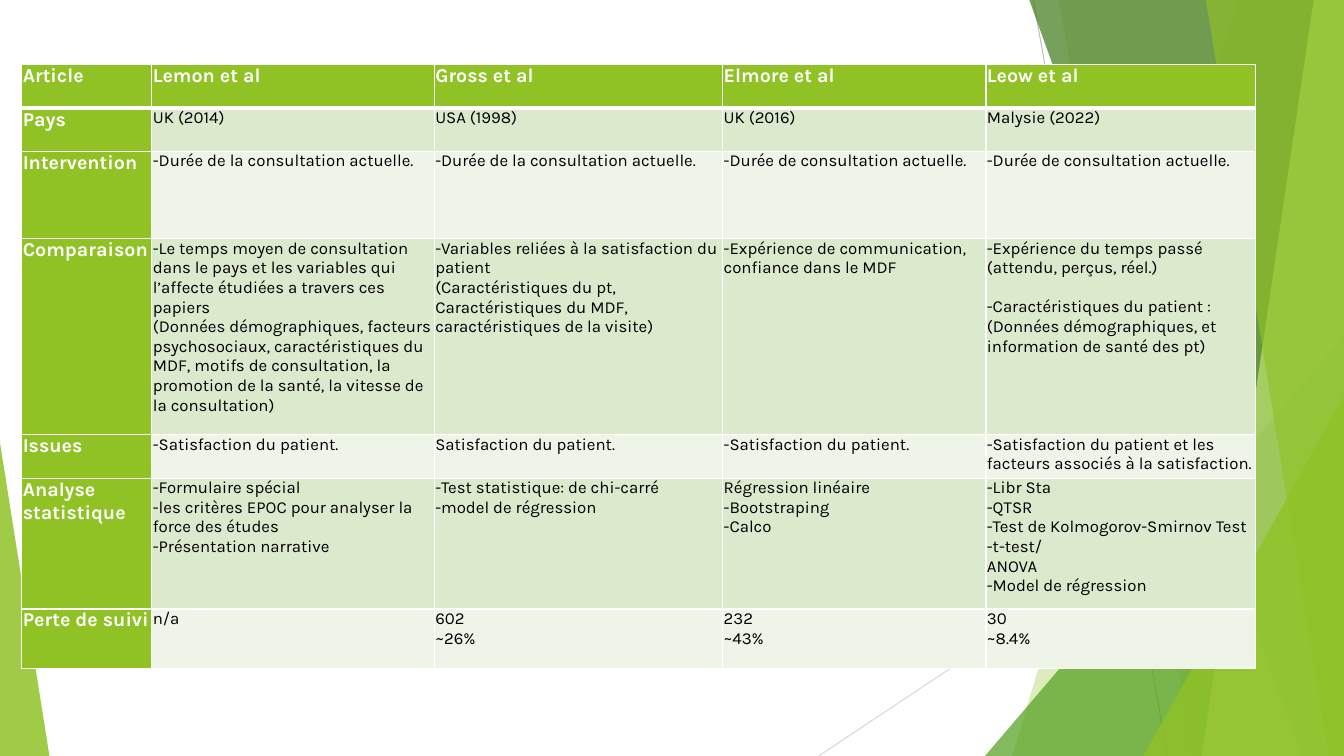
import dataclasses
import pptx
import pptx.util
import pptx.dml.color
import pptx.enum.shapes
import pptx.oxml
import lxml.etree

NS = "http://schemas.openxmlformats.org/drawingml/2006/main"


@dataclasses.dataclass(frozen=True)
class Theme:
    font: str = "Karla"
    head_size: int = 14
    body_size: int = 12
    gap: int = 14
    green: str = "90C226"
    leaf: str = "54A021"
    forest: str = "3F7819"
    lime: str = "C0E474"
    bands: tuple = ("DBE9CD", "EEF4E8")
    white: str = "FFFFFF"
    black: str = "000000"
    line_greys: tuple = ("BFBFBF", "D9D9D9")


@dataclasses.dataclass(frozen=True)
class Box:
    left: int
    top: int
    width: int
    height: int

    def x(self, percent):
        return round(self.left + self.width * percent / 100)

    def y(self, percent):
        return round(self.top + self.height * percent / 100)

    def area(self, left, top, right, bottom):
        x, y = self.x(left), self.y(top)
        return Box(x, y, self.x(right) - x, self.y(bottom) - y)


THEME = Theme()
GAP = "gap"  # opens a space above the next paragraph

# Background: lines as x, y, x, y; panels as top x, bottom x;
# triangles as left, top, right, apex. All are percentages of the page.
LINES = [(76.89, 0, 86.87, 100), (100, 53.73, 60.92, 100)]
FACETS = [
    ("panel", (92.12, 75.32), THEME.green, 30),
    ("panel", (78.77, 88.75), THEME.green, 20),
    ("triangle", (73.29, 44.4, 100, 1), THEME.leaf, 72),
    ("panel", (76.59, 96.85), THEME.forest, 70),
    ("panel", (97.75, 89.42), THEME.lime, 70),
    ("panel", (89.72, 98.87), THEME.green, 65),
    ("triangle", (85.07, 52.4, 100, 1), THEME.green, 80),
    ("triangle", (0, 58.53, 3.68, 0), THEME.green, 85),
]

# Table: column shares, row heights in units of one short row, and the text
COLUMNS = [1.29, 2.8, 2.86, 2.61, 2.67]
ROWS = [1, 1, 2, 4.5, 1, 3, 1.36]
STUDIES = [
    ["Article", "Lemon et al", "Gross et al", "Elmore et al", "Leow et al"],
    ["Pays", "UK (2014)", "USA (1998)", "UK (2016)", "Malysie (2022)"],
    ["Intervention",
     "-Durée de la consultation actuelle.",
     "-Durée de la consultation actuelle.",
     "-Durée de consultation actuelle.",
     "-Durée de consultation actuelle."],
    ["Comparaison",
     ["-Le temps moyen de consultation dans le pays et les variables qui "
      "l’affecte étudiées a travers ces papiers",
      "(Données démographiques, facteurs psychosociaux, caractéristiques du "
      "MDF, motifs de consultation, la promotion de la santé, la vitesse de "
      "la consultation)"],
     ["-Variables reliées à la satisfaction du patient",
      "(Caractéristiques du pt,",
      "Caractéristiques du MDF, caractéristiques de la visite)"],
     "-Expérience de communication, confiance dans le MDF",
     ["-Expérience du temps passé (attendu, perçus, réel.)",
      GAP,
      "-Caractéristiques du patient :",
      "(Données démographiques, et information de santé des pt)"]],
    ["Issues",
     "-Satisfaction du patient.",
     "Satisfaction du patient.",
     "-Satisfaction du patient.",
     "-Satisfaction du patient et les facteurs associés à la satisfaction."],
    ["Analyse statistique",
     ["-Formulaire spécial",
      "-les critères EPOC pour analyser la force des études",
      "-Présentation narrative"],
     ["-Test statistique: de chi-carré", "-model de régression"],
     ["Régression linéaire", "-Bootstraping", "-Calco"],
     ["-Libr Sta", "-QTSR", "-Test de Kolmogorov-Smirnov Test", "-t-test/",
      "ANOVA", "-Model de régression"]],
    ["Perte de suivi", "n/a", ["602", "~26%"], ["232", "~43%"], ["30", "~8.4%"]],
]


def rgb(code):
    return pptx.dml.color.RGBColor.from_string(code)


def paint(shape, color, opacity):
    shape.shadow.inherit = False
    shape.line.fill.background()
    shape.fill.solid()
    shape.fill.fore_color.rgb = rgb(color)
    tint = shape._element.spPr.find(f"{{{NS}}}solidFill/{{{NS}}}srgbClr")
    lxml.etree.SubElement(tint, f"{{{NS}}}alpha", val=str(opacity * 1000))


def add_background(page, box):
    # Thin grey lines
    for (x1, y1, x2, y2), grey in zip(LINES, THEME.line_greys):
        line = page.shapes.add_connector(
            pptx.enum.shapes.MSO_CONNECTOR.STRAIGHT,
            box.x(x1), box.y(y1), box.x(x2), box.y(y2))
        line.line.color.rgb = rgb(grey)
        line.line.width = pptx.util.Pt(0.75)
        lxml.etree.SubElement(line._element.spPr, f"{{{NS}}}effectLst")
    # Translucent green facets
    for kind, place, color, opacity in FACETS:
        if kind == "panel":
            top, bottom = place
            outline = page.shapes.build_freeform(box.x(top), box.y(0))
            outline.add_line_segments(
                [(box.x(100), box.y(0)), (box.x(100), box.y(100)),
                 (box.x(bottom), box.y(100))], close=True)
            facet = outline.convert_to_shape()
        else:
            left, top, right, apex = place
            area = box.area(left, top, right, 100)
            facet = page.shapes.add_shape(
                pptx.enum.shapes.MSO_SHAPE.ISOSCELES_TRIANGLE,
                area.left, area.top, area.width, area.height)
            facet.adjustments[0] = apex
        paint(facet, color, opacity)


def set_borders(cell, row):
    props = cell._tc.get_or_add_tcPr()
    widths = {"L": 1, "R": 1, "T": 3 if row == 1 else 1, "B": 3 if row == 0 else 1}
    for index, (side, width) in enumerate(widths.items()):
        props.insert(index, pptx.oxml.parse_xml(
            f'<a:ln{side} xmlns:a="{NS}" w="{pptx.util.Pt(width)}"><a:solidFill>'
            f'<a:srgbClr val="{THEME.white}"/></a:solidFill></a:ln{side}>'))


def fill_cell(cell, content, row, column):
    heading = row == 0 or column == 0
    cell.margin_left = cell.margin_right = pptx.util.Inches(0.01)
    cell.margin_top = cell.margin_bottom = 0
    cell.fill.solid()
    cell.fill.fore_color.rgb = rgb(THEME.green if heading else THEME.bands[(row - 1) % 2])
    set_borders(cell, row)
    para, spaced = None, False
    for text in [content] if isinstance(content, str) else content:
        if text == GAP:
            spaced = True
            continue
        para = cell.text_frame.add_paragraph() if para else cell.text_frame.paragraphs[0]
        if spaced:
            para.space_before = pptx.util.Pt(THEME.gap)
            spaced = False
        span = para.add_run()
        span.text = text
        span.font.name = THEME.font
        span.font.size = pptx.util.Pt(THEME.head_size if heading else THEME.body_size)
        span.font.bold = heading
        span.font.color.rgb = rgb(THEME.white if heading else THEME.black)


def add_studies_table(page, box):
    frame = page.shapes.add_table(
        len(ROWS), len(COLUMNS), box.left, box.top, box.width, box.height)
    table = frame.table
    table.first_row = table.horz_banding = False
    for column, share in zip(table.columns, COLUMNS):
        column.width = round(box.width * share / sum(COLUMNS))
    for row, units in zip(table.rows, ROWS):
        row.height = round(box.height * units / sum(ROWS))
    for r, texts in enumerate(STUDIES):
        for c, content in enumerate(texts):
            fill_cell(table.cell(r, c), content, r, c)


def main():
    deck = pptx.Presentation()
    deck.slide_width = pptx.util.Inches(13.33)
    deck.slide_height = pptx.util.Inches(7.5)
    page = deck.slides.add_slide(deck.slide_layouts[6])
    whole = Box(0, 0, deck.slide_width, deck.slide_height)
    add_background(page, whole)
    add_studies_table(page, whole.area(1.62, 8.53, 93.4, 88.4))
    deck.save("out.pptx")


if __name__ == "__main__":
    main()
